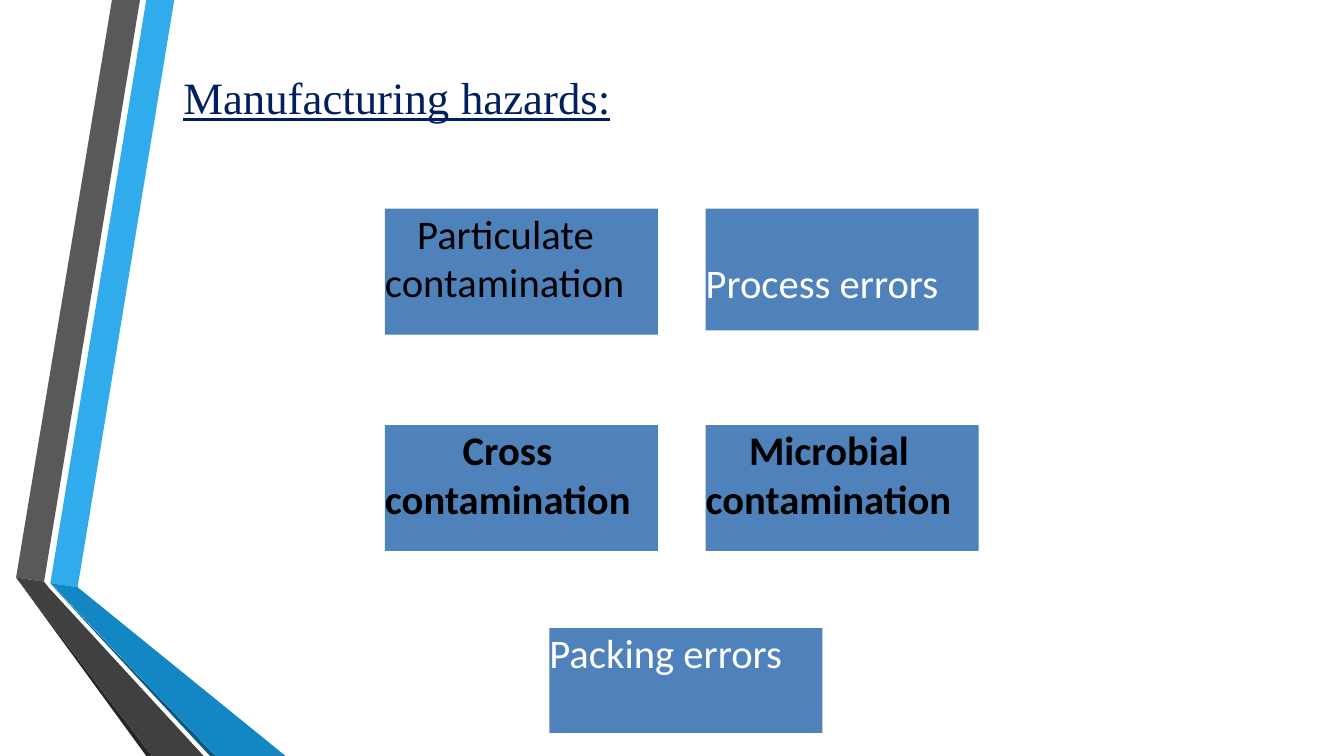
from dataclasses import dataclass

from pptx import Presentation
from pptx.dml.color import RGBColor
from pptx.enum import shapes, text
from pptx.util import Pt


@dataclass(frozen=True)
class Theme:
    title_font: str = "Times New Roman"
    body_font: str = "Calibri"
    title_size: float = 32
    body_size: float = 29
    navy: str = "001F5F"
    panel: str = "4F81BB"
    dark: str = "000000"
    light: str = "FFFFFF"


THEME = Theme()
PAGE_SIZE = (960, 540)

# Text and letter spacing in points
TITLE = [("Manufacturing", 0), (" ", -1.1), ("hazards:", 0)]
TITLE_BOX = (123.84, 0, 789.12, 138.24)

# Colour and corner points of each ribbon part, back to front
RIBBONS = [
    ("30ACEC", [(36, 416.5), (55.5, 419.5), (124.5, 0), (104.5, 0)]),
    ("595959", [(100, 0), (80, 0), (11.5, 412.5), (31.5, 415.5)]),
    ("262626", [(11.5, 412.5), (104.5, 540), (108.5, 540)]),
    ("0C5A82", [(36, 417), (150, 540), (154, 540)]),
    ("1287C3", [(36, 416.5), (154, 540), (204, 540), (55.5, 419.5)]),
    ("404040", [(145.5, 540), (34.5, 419.5), (31.5, 415.5), (11.5, 412.5),
                (108.5, 540)]),
]

# Text, column, row, height, first-line indent, top inset, colour, bold
HAZARDS = [
    ("Particulate contamination", "left", 0, 90, 23, 0, THEME.dark, False),
    ("Process errors", "right", 0, 87, 0, 35.4, THEME.light, False),
    ("Cross contamination", "left", 1, 90, 55.5, 0, THEME.dark, True),
    ("Microbial contamination", "right", 1, 90, 31, 0, THEME.dark, True),
    ("Packing errors", "middle", 2, 75, 0, 0, THEME.light, False),
]
COLUMNS = {"left": 275, "middle": 392.4, "right": 504}
ROWS = [149, 303.6, 448.6]
PANEL_WIDTH = 195


def paint(shape, colour):
    shape.shadow.inherit = False
    shape.fill.solid()
    shape.fill.fore_color.rgb = RGBColor.from_string(colour)
    shape.line.fill.background()


def add_span(para, words, font, size, colour):
    span = para.add_run()
    span.text = words
    span.font.name = font
    span.font.size = Pt(size)
    span.font.color.rgb = RGBColor.from_string(colour)
    return span


def add_ribbon(page, colour, corners):
    start, *others = [(Pt(x), Pt(y)) for x, y in corners]
    outline = page.shapes.build_freeform(*start)
    outline.add_line_segments(others, close=True)
    paint(outline.convert_to_shape(), colour)


def add_title(page):
    box = page.shapes.add_textbox(*map(Pt, TITLE_BOX))
    frame = box.text_frame
    frame.word_wrap = True
    frame.vertical_anchor = text.MSO_ANCHOR.MIDDLE
    for words, spacing in TITLE:
        span = add_span(frame.paragraphs[0], words, THEME.title_font,
                        THEME.title_size, THEME.navy)
        span.font.underline = True
        if spacing:
            span._r.get_or_add_rPr().set("spc", str(round(spacing * 100)))


def add_hazard(page, words, column, row, height, indent, inset, colour, bold):
    place = (COLUMNS[column], ROWS[row], PANEL_WIDTH, height)
    panel = page.shapes.add_shape(shapes.MSO_SHAPE.RECTANGLE, *map(Pt, place))
    paint(panel, THEME.panel)
    frame = panel.text_frame
    frame.word_wrap = True
    frame.vertical_anchor = text.MSO_ANCHOR.TOP
    frame.margin_left = frame.margin_right = frame.margin_bottom = 0
    frame.margin_top = Pt(inset)
    para = frame.paragraphs[0]
    para.alignment = text.PP_ALIGN.LEFT
    para._p.get_or_add_pPr().set("indent", str(Pt(indent)))
    span = add_span(para, words, THEME.body_font, THEME.body_size, colour)
    span.font.bold = bold


def main():
    deck = Presentation()
    deck.slide_width, deck.slide_height = map(Pt, PAGE_SIZE)
    page = deck.slides.add_slide(deck.slide_layouts[6])
    for ribbon in RIBBONS:
        add_ribbon(page, *ribbon)
    add_title(page)
    for hazard in HAZARDS:
        add_hazard(page, *hazard)
    deck.save("out.pptx")


if __name__ == "__main__":
    main()
